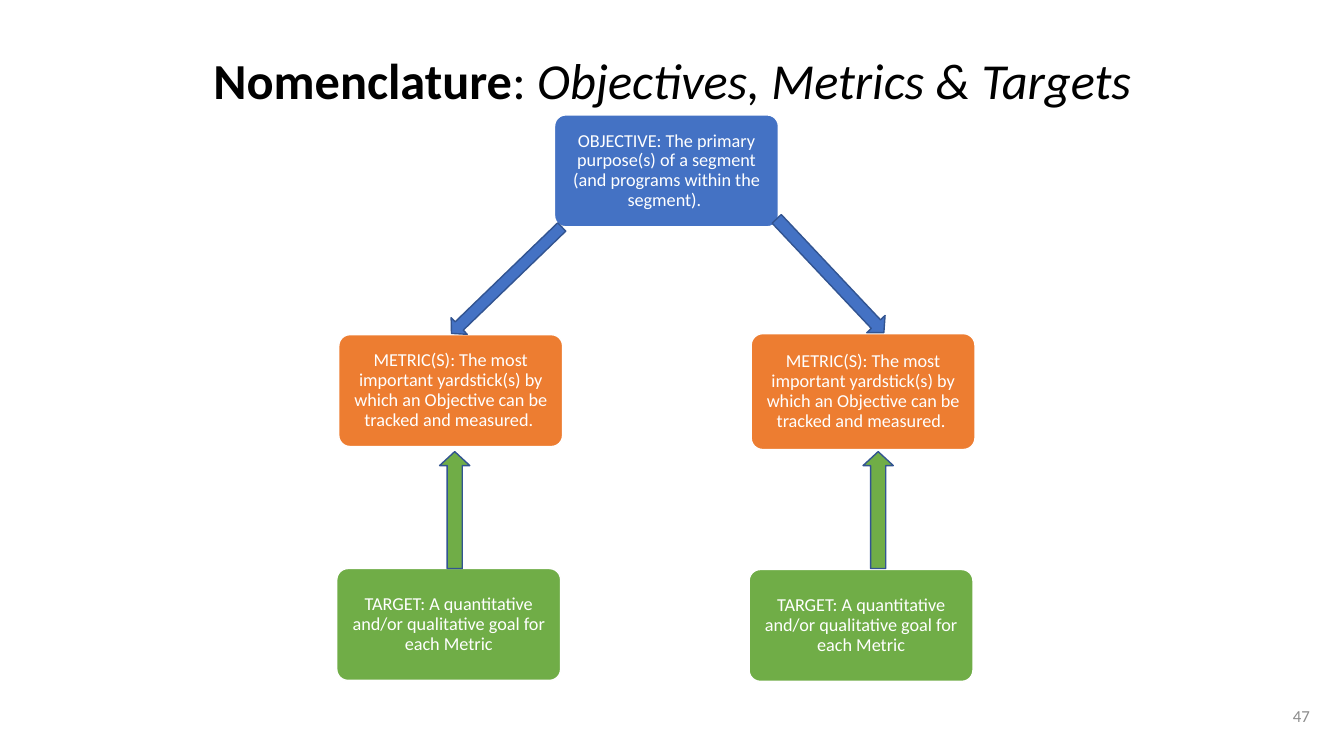
from pptx import Presentation
from pptx.dml.color import RGBColor
from pptx.enum.shapes import MSO_SHAPE as Shape
from pptx.enum.text import MSO_ANCHOR as Anchor, MSO_AUTO_SIZE as AutoSize, PP_ALIGN as Align
from pptx.util import Inches, Pt

COLORS = {
    "objective": "4472C4",
    "metric": "ED7D31",
    "target": "70AD47",
    "outline": "325491",
    "title": "000000",
    "white": "FFFFFF",
    "number": "8C8C8C",
}
BOX_WIDTH = 2.22
OBJECTIVE = "OBJECTIVE: The primary purpose(s) of a segment (and programs within the segment). "
METRIC = ("METRIC(S): The most important yardstick(s) by which an Objective "
          "can be tracked and measured. ")
TARGET = "TARGET: A quantitative and/or qualitative goal for each Metric"


def rgb(name):
    return RGBColor.from_string(COLORS[name])


def add_span(para, text, size, color, bold=False, italic=False):
    span = para.add_run()
    span.text = text
    font = span.font
    font.name, font.size = "Calibri", Pt(size)
    font.bold, font.italic = bold, italic
    font.color.rgb = rgb(color)


def add_filled_shape(page, kind, left, top, width, height, fill, line):
    shape = page.shapes.add_shape(
        kind, Inches(left), Inches(top), Inches(width), Inches(height))
    shape.shadow.inherit = False
    shape.fill.solid()
    shape.fill.fore_color.rgb = rgb(fill)
    shape.line.color.rgb = rgb(line)
    shape.line.width = Pt(1)
    return shape


def add_box(page, left, top, height, color, text):
    box = add_filled_shape(page, Shape.ROUNDED_RECTANGLE, left, top,
                           BOX_WIDTH, height, color, "white")
    box.adjustments[0] = 0.1
    frame = box.text_frame
    frame.word_wrap = True
    frame.vertical_anchor = Anchor.MIDDLE
    frame.margin_left = frame.margin_right = Inches(0.09)
    frame.margin_top = frame.margin_bottom = Inches(0.09)
    para = frame.paragraphs[0]
    para.alignment = Align.CENTER
    para.line_spacing = 0.9
    add_span(para, text, 13, "white")


def add_arrow(page, left, top, width, height, color, rotation):
    """Add a block arrow that points down before it is rotated."""
    arrow = add_filled_shape(page, Shape.DOWN_ARROW, left, top,
                             width, height, color, "outline")
    arrow.adjustments[0] = 0.5
    arrow.adjustments[1] = 0.461
    arrow.rotation = rotation


def set_title(page):
    title = page.shapes.title
    title.left, title.top = Inches(0.92), Inches(0.4)
    title.width, title.height = Inches(11.5), Inches(0.86)
    frame = title.text_frame
    frame.auto_size = AutoSize.NONE
    frame.vertical_anchor = Anchor.MIDDLE
    para = frame.paragraphs[0]
    para.alignment = Align.CENTER
    para.line_spacing = 0.9
    add_span(para, "Nomenclature", 36, "title", bold=True)
    add_span(para, ": ", 36, "title")
    add_span(para, "Objectives, Metrics & Targets", 36, "title", italic=True)


def add_page_number(page, number):
    box = page.shapes.add_textbox(Inches(10.09), Inches(6.9), Inches(3), Inches(0.4))
    frame = box.text_frame
    frame.word_wrap = True
    frame.vertical_anchor = Anchor.MIDDLE
    para = frame.paragraphs[0]
    para.alignment = Align.RIGHT
    add_span(para, number, 12, "number")


def main():
    deck = Presentation()
    deck.slide_width, deck.slide_height = Inches(13.33), Inches(7.5)
    page = deck.slides.add_slide(deck.slide_layouts[5])

    set_title(page)
    add_box(page, 5.5, 1.14, 1.11, "objective", OBJECTIVE)
    add_box(page, 7.43, 5.65, 1.11, "target", TARGET)
    add_box(page, 3.34, 5.64, 1.11, "target", TARGET)
    add_page_number(page, "47")
    add_box(page, 3.36, 3.32, 1.11, "metric", METRIC)
    add_box(page, 7.45, 3.31, 1.15, "metric", METRIC)

    add_arrow(page, 8.11, 1.96, 0.25, 1.55, "objective", 316.7)
    for left in (4.36, 8.56):
        add_arrow(page, left, 4.48, 0.3, 1.16, "target", 180)
    add_arrow(page, 4.91, 2.02, 0.23, 1.52, "objective", 46)

    deck.save("out.pptx")


if __name__ == "__main__":
    main()
